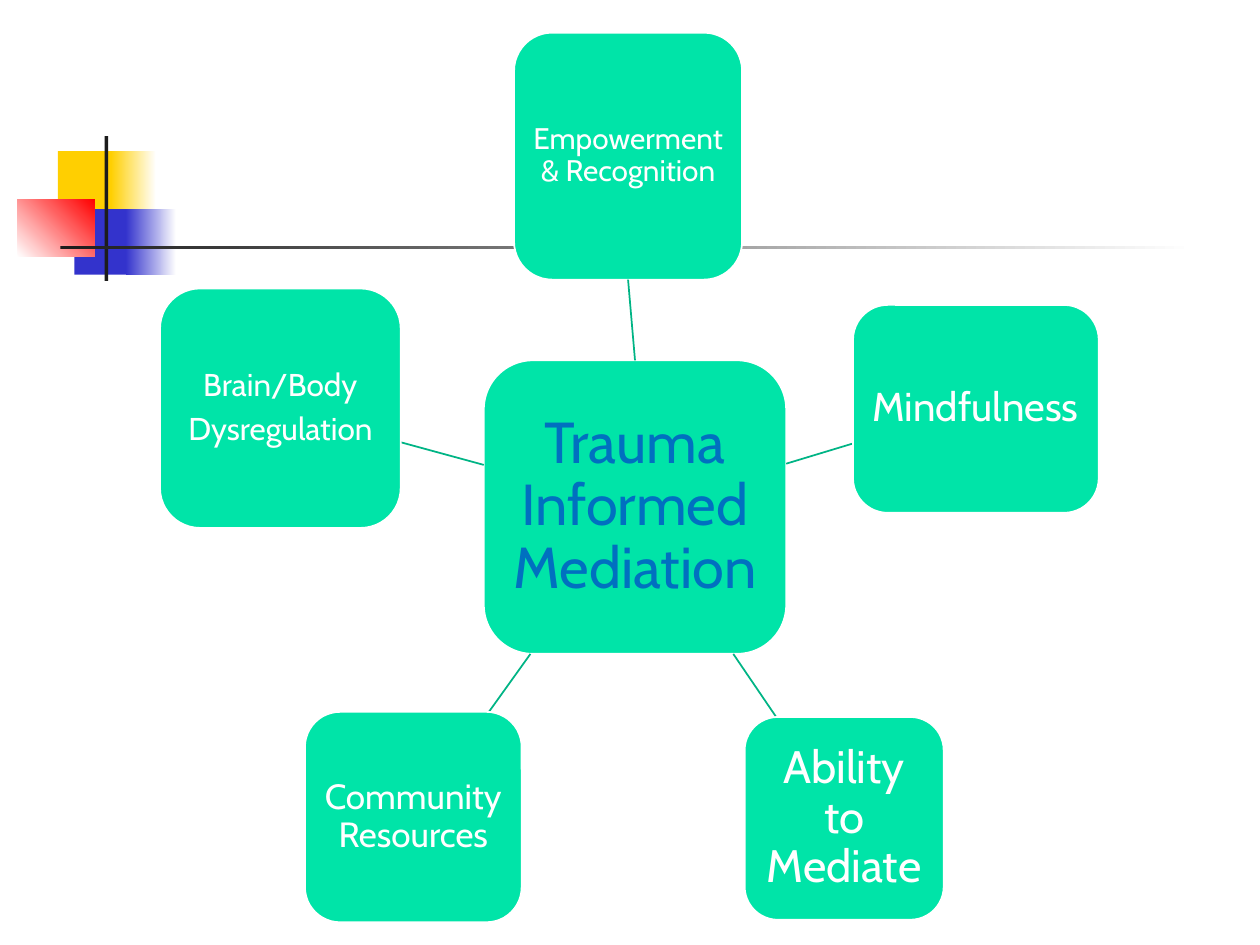
from pptx import Presentation
from pptx.dml.color import RGBColor
from pptx.enum.shapes import MSO_CONNECTOR as Line, MSO_SHAPE as Shape
from pptx.enum.text import MSO_ANCHOR as Anchor, PP_ALIGN as Align
from pptx.oxml import parse_xml
from pptx.oxml.ns import nsdecls
from pptx.util import Inches, Pt

WHITE = RGBColor(0xFF, 0xFF, 0xFF)
GREEN = RGBColor(0x00, 0xE4, 0xA8)
DARK_GREEN = RGBColor(0x00, 0xB4, 0x85)
BLUE = RGBColor(0x00, 0x70, 0xC0)
YELLOW = RGBColor(0xFF, 0xCF, 0x01)
INDIGO = RGBColor(0x33, 0x33, 0xCC)
RED = RGBColor(0xFF, 0x00, 0x00)
BLACK = RGBColor(0x1C, 0x1C, 0x1C)

ORNAMENT = [
    ((0.46, 1.2, 0.48, 0.52), [YELLOW], 0),
    ((0.88, 1.2, 0.36, 0.52), [YELLOW, WHITE], 0),
    ((0.59, 1.66, 0.46, 0.52), [INDIGO], 0),
    ((1, 1.66, 0.4, 0.52), [INDIGO, WHITE], 0),
    ((0.14, 1.58, 0.61, 0.46), [WHITE, RED], 45),
    ((0.83, 1.08, 0.03, 1.15), [BLACK], 0),
    ((0.48, 1.95, 9, 0.03), [BLACK, WHITE], 0),
]

TOPICS = [
    ((6.77, 2.42, 1.95, 1.65), ["Mindfulness"], 23, 0.06, (6.24, 3.68, 6.77, 3.52)),
    ((5.91, 5.69, 1.58, 1.61), ["Ability to Mediate"], 26, 0.07, (5.82, 5.19, 6.16, 5.69)),
    ((2.42, 5.65, 1.72, 1.67), ["Community Resources"], 20, 0.06, (4.21, 5.19, 3.88, 5.65)),
    ((1.27, 2.29, 1.91, 1.9), ["Brain/Body", "Dysregulation"], 18, 0.04, (3.84, 3.69, 3.18, 3.51)),
]


def write(frame, paragraphs, size, color=WHITE, inset=0.05, gap=5.6):
    frame.word_wrap = True
    frame.vertical_anchor = Anchor.MIDDLE
    frame.margin_left = frame.margin_right = Inches(inset)
    frame.margin_top = frame.margin_bottom = Inches(inset)
    for index, text in enumerate(paragraphs):
        paragraph = frame.add_paragraph() if index else frame.paragraphs[0]
        paragraph.alignment = Align.CENTER
        paragraph.line_spacing = 0.9
        paragraph.space_before = Pt(gap if index else 0)
        run = paragraph.add_run()
        run.text = text
        run.font.name = "Cabin"
        run.font.size = Pt(size)
        run.font.color.rgb = color


class Diagram:
    corner = 0.167
    line_width = Pt(1)

    def __init__(self, slide):
        self.shapes = slide.shapes

    def bar(self, box, colors, angle):
        bar = self.shapes.add_shape(Shape.RECTANGLE, *map(Inches, box))
        bar.shadow.inherit = False
        bar.line.fill.background()
        if len(colors) == 1:
            bar.fill.solid()
            bar.fill.fore_color.rgb = colors[0]
            return
        bar.fill.gradient()
        bar.fill.gradient_angle = angle
        for stop, color in zip(bar.fill.gradient_stops, colors):
            stop.color.rgb = color

    def node(self, box, paragraphs, size, **text_format):
        node = self.shapes.add_shape(Shape.ROUNDED_RECTANGLE, *map(Inches, box))
        node.adjustments[0] = self.corner
        node.shadow.inherit = False
        node.fill.solid()
        node.fill.fore_color.rgb = GREEN
        node.line.color.rgb = WHITE
        node.line.width = self.line_width
        write(node.text_frame, paragraphs, size, **text_format)
        return node

    def spoke(self, ends):
        spoke = self.shapes.add_connector(Line.STRAIGHT, *map(Inches, ends))
        spoke.line.color.rgb = DARK_GREEN
        spoke.line.width = self.line_width
        spoke._element.spPr.append(parse_xml(f"<a:effectLst {nsdecls('a')}/>"))
        return spoke


def main():
    deck = Presentation()
    deck.slide_width, deck.slide_height = Inches(10), Inches(7.5)
    diagram = Diagram(deck.slides.add_slide(deck.slide_layouts[6]))

    for box, colors, angle in ORNAMENT:
        diagram.bar(box, colors, angle)

    mediation = diagram.node((3.84, 2.86, 2.4, 2.33), ["Trauma Informed Mediation"], 33,
                             color=BLUE, inset=0.09)
    empowerment = diagram.node((4.08, 0.26, 1.81, 1.96), ["Empowerment & Recognition"], 17)
    upward = diagram.spoke((5.02, 2.86, 5.01, 2.22))
    upward.begin_connect(mediation, 0)
    upward.end_connect(empowerment, 2)

    for box, paragraphs, size, inset, ends in TOPICS:
        diagram.spoke(ends)
        diagram.node(box, paragraphs, size, inset=inset)

    deck.save("out.pptx")


if __name__ == "__main__":
    main()
